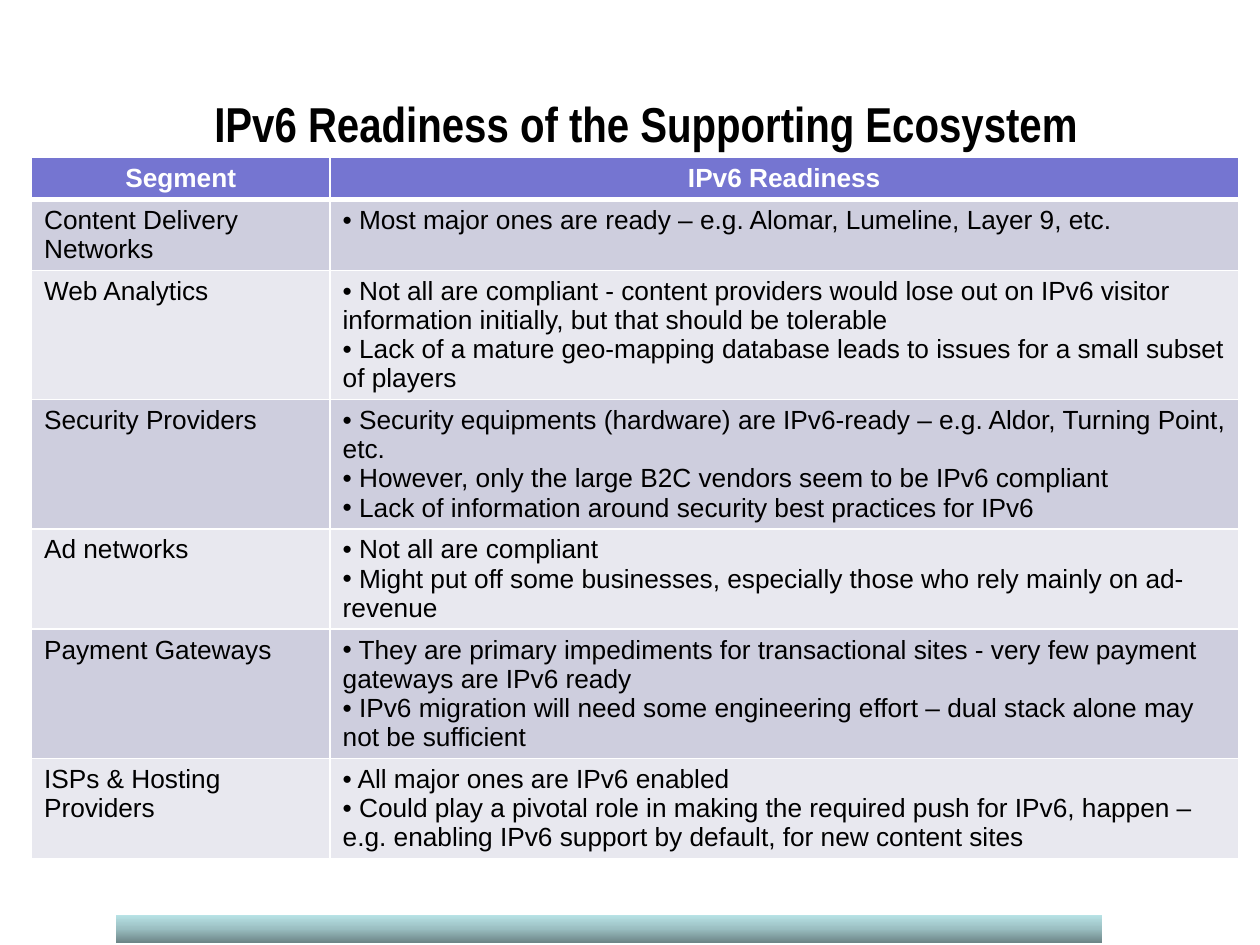
from copy import deepcopy
from dataclasses import dataclass

from lxml import etree
from pptx import Presentation
from pptx import util as u
from pptx.dml import color as c
from pptx.enum import shapes, text
from pptx.oxml import ns


@dataclass(frozen=True)
class Theme:
    """Colours, fonts and type sizes of the slide."""
    ink: str = "000000"
    white: str = "FFFFFF"
    head: str = "7575D1"
    bands: tuple = ("CECEDE", "E8E8EF")
    bar: tuple = ("B8E3E6", "9BBFC2", "6D8688")
    body: str = "Arial"
    title: str = "Arial Narrow"
    big: float = 28
    small: float = 15


THEME = Theme()
HEADS = ("Segment", "IPv6 Readiness")
ROWS = (
    ("Content Delivery Networks", 0.52, (
        "Most major ones are ready – e.g. Alomar, Lumeline, Layer 9, etc.",)),
    ("Web Analytics", 0.95, (
        "Not all are compliant - content providers would lose out on IPv6 "
        "visitor information initially, but that should be tolerable",
        "Lack of a mature geo-mapping database leads to issues for a small "
        "subset of players")),
    ("Security Providers", 0.95, (
        "Security equipments (hardware) are IPv6-ready – e.g. Aldor, "
        "Turning Point, etc.",
        "However, only the large B2C vendors seem to be IPv6 compliant",
        "Lack of information around security best practices for IPv6")),
    ("Ad networks", 0.74, (
        "Not all are compliant",
        "Might put off some businesses, especially those who rely mainly on "
        "ad-revenue")),
    ("Payment Gateways", 0.95, (
        "They are primary impediments for transactional sites - very few "
        "payment gateways are IPv6 ready",
        "IPv6 migration will need some engineering effort – dual stack alone "
        "may not be sufficient")),
    ("ISPs & Hosting Providers", 0.74, (
        "All major ones are IPv6 enabled",
        "Could play a pivotal role in making the required push for IPv6, "
        "happen – e.g. enabling IPv6 support by default, for new content "
        "sites")),
)


def rgb(code):
    """Turn a hex code into a colour."""
    return c.RGBColor.from_string(code)


def style(para, size, name, ink, bold=False):
    """Set the font of a paragraph."""
    font = para.font
    font.size, font.name, font.bold = u.Pt(size), name, bold
    font.color.rgb = rgb(ink)


def add_bar(slide):
    """Draw the shaded bar at the foot."""
    bar = slide.shapes.add_shape(
        shapes.MSO_SHAPE.RECTANGLE, u.Inches(0.92), u.Inches(7.26),
        u.Inches(7.83), u.Inches(0.22))
    bar.shadow.inherit = False
    bar.line.fill.background()
    bar.fill.gradient()
    bar.fill.gradient_angle = 270
    stop = bar.fill._fill._gradFill.gsLst[0]
    stop.addnext(deepcopy(stop))
    for i, (stop, code) in enumerate(zip(bar.fill.gradient_stops, THEME.bar)):
        stop.color.rgb = rgb(code)
        stop.position = i / 2


def set_title(slide, words):
    """Place and format the title."""
    title = slide.shapes.title
    title.left, title.top = u.Inches(0.5), u.Inches(0.75)
    title.width, title.height = u.Inches(9.25), u.Inches(0.45)
    frame = title.text_frame
    frame.text = words
    frame.vertical_anchor = text.MSO_ANCHOR.MIDDLE
    para = frame.paragraphs[0]
    para.alignment = text.PP_ALIGN.CENTER
    style(para, THEME.big, THEME.title, THEME.ink, True)


def edge(cell, base=1):
    """Rule a cell in white, with its own base width."""
    props = cell._tc.get_or_add_tcPr()
    for i, side in enumerate("LRTB"):
        width = base if side == "B" else 1
        line = etree.Element(ns.qn(f"a:ln{side}"), w=str(u.Pt(width)))
        fill = etree.SubElement(line, ns.qn("a:solidFill"))
        etree.SubElement(fill, ns.qn("a:srgbClr"), val=THEME.white)
        props.insert(i, line)


def bullet(para):
    """Give a paragraph a bullet with no indent."""
    props = para._p.get_or_add_pPr()
    props.set("marL", "0")
    props.set("indent", "0")
    etree.SubElement(props, ns.qn("a:buFont"), typeface=THEME.body)
    etree.SubElement(props, ns.qn("a:buChar"), char="•")


def fill_cell(cell, lines, back, head=False, dots=False):
    """Write, colour and rule one cell."""
    cell.fill.solid()
    cell.fill.fore_color.rgb = rgb(back)
    edge(cell, 3 if head else 1)
    lead = " " if dots else ""
    cell.text = "\n".join(lead + line for line in lines)
    for para in cell.text_frame.paragraphs:
        if dots:
            bullet(para)
        if head:
            para.alignment = text.PP_ALIGN.CENTER
        style(para, THEME.small, THEME.body,
              THEME.white if head else THEME.ink, head)


def add_grid(slide):
    """Build the readiness table."""
    highs = [0.32] + [high for _, high, _ in ROWS]
    grid = slide.shapes.add_table(
        len(highs), len(HEADS), u.Inches(0.25), u.Inches(1.25),
        u.Inches(9.58), u.Inches(sum(highs))).table
    for col, wide in zip(grid.columns, (2.37, 7.21)):
        col.width = u.Inches(wide)
    for row, high in zip(grid.rows, highs):
        row.height = u.Inches(high)
    for i, head in enumerate(HEADS):
        fill_cell(grid.cell(0, i), [head], THEME.head, head=True)
    for i, (name, _, notes) in enumerate(ROWS):
        back = THEME.bands[i % 2]
        fill_cell(grid.cell(i + 1, 0), [name], back)
        fill_cell(grid.cell(i + 1, 1), notes, back, dots=True)


def main():
    """Build and save the slide."""
    deck = Presentation()
    deck.slide_width, deck.slide_height = u.Inches(10), u.Inches(7.5)
    slide = deck.slides.add_slide(deck.slide_layouts[5])
    add_bar(slide)
    set_title(slide, "IPv6 Readiness of the Supporting Ecosystem")
    add_grid(slide)
    deck.save("out.pptx")


if __name__ == "__main__":
    main()
